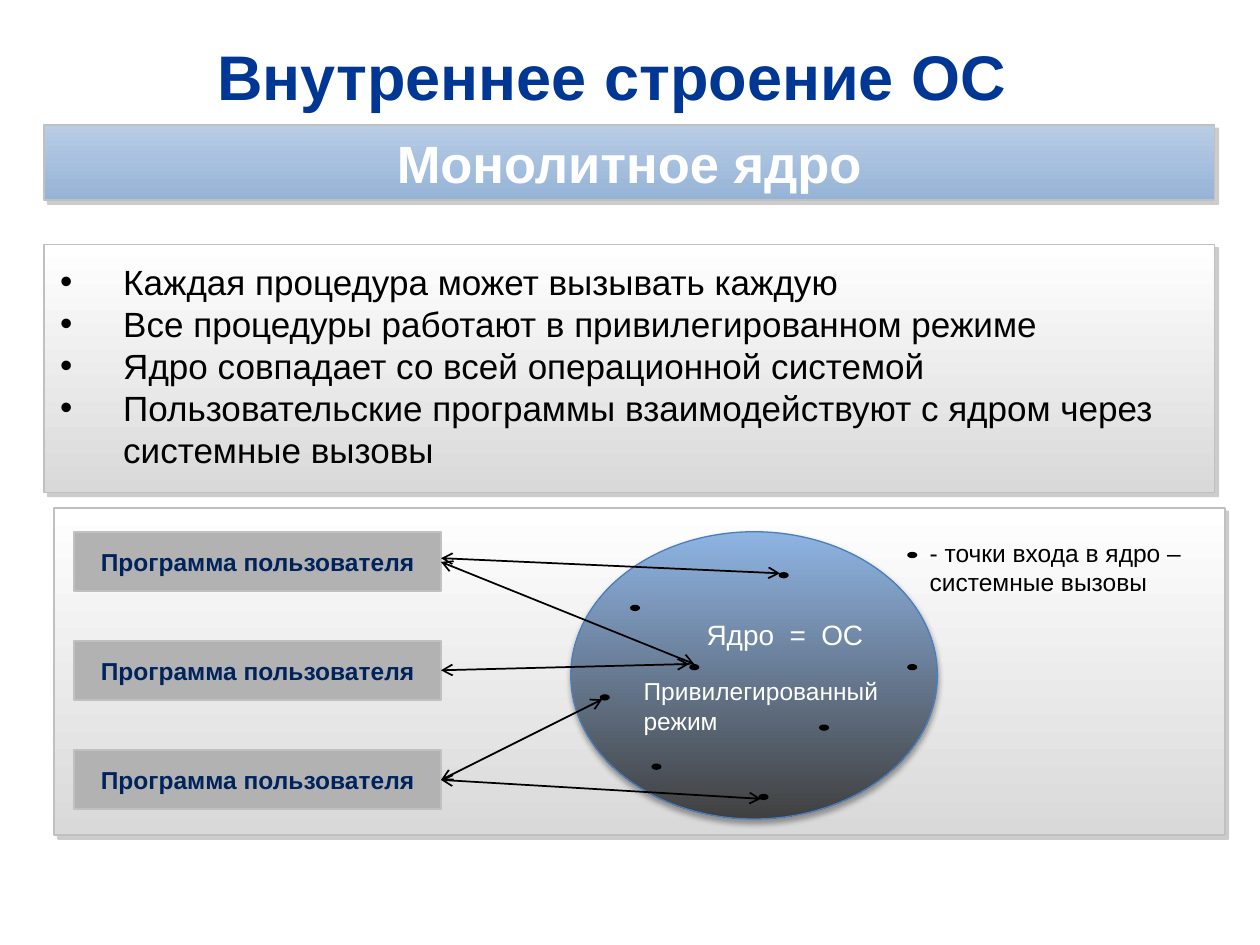
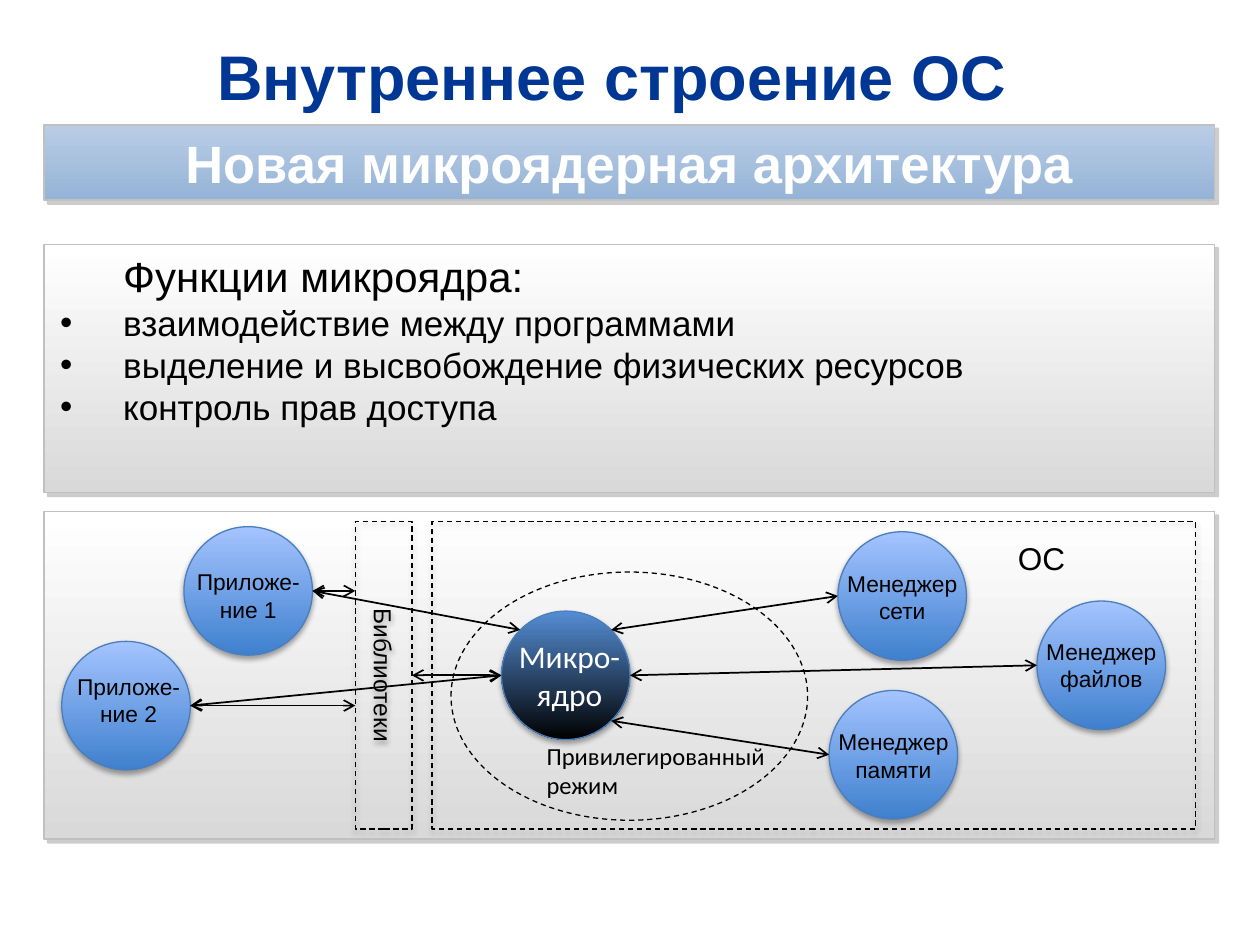
from dataclasses import dataclass
from math import cos, radians, sin

from lxml import etree
from pptx import Presentation
from pptx.dml.color import RGBColor
from pptx.enum.dml import MSO_LINE
from pptx.enum.shapes import MSO_CONNECTOR, MSO_SHAPE
from pptx.enum.text import MSO_ANCHOR, MSO_AUTO_SIZE, PP_ALIGN
from pptx.oxml.ns import qn
from pptx.util import Inches, Pt


@dataclass(frozen=True)
class Theme:
    font: str = "Arial"
    second_font: str = "Calibri"
    title: str = "003794"
    program_text: str = "00235C"
    program_fill: str = "B2B2B2"
    border: str = "C0C0C0"
    circle_border: str = "4B7EBC"
    black: str = "000000"
    white: str = "FFFFFF"
    panel: tuple = ("FFFFFF", "D9D9D9")
    band: tuple = ("B9CDE5", "95B3D7")
    kernel: tuple = ("8EB4E3", "404040")
    microkernel: tuple = ("558ED5", "000000")
    service: tuple = ("A4C4FF", "3F80CE")
    # colour, opacity in percent, blur and distance in points, direction in degrees
    hard_shadow: tuple = ("808080", 40, 0, 3, 45)
    soft_shadow: tuple = ("000000", 35, 3.1, 1.8, 90)
    title_size: int = 36
    band_size: int = 30
    heading_size: int = 24
    body_size: int = 20
    large_size: int = 18
    medium_size: int = 16
    small_size: int = 14
    label_size: int = 13


THEME = Theme()
LEFT, WIDTH = 0.35, 9.29
DIAMETER = 1.02
DOT_WIDTH, DOT_HEIGHT = 0.08, 0.05


def color(value):
    return RGBColor.from_string(value)


def format_paragraph(paragraph, size, text_color, bold=False, align=PP_ALIGN.LEFT, font=THEME.font):
    paragraph.alignment = align
    paragraph.font.name = font
    paragraph.font.size = Pt(size)
    paragraph.font.bold = bold
    paragraph.font.color.rgb = color(text_color)


def set_margins(frame, horizontal, vertical):
    frame.margin_left = frame.margin_right = Inches(horizontal)
    frame.margin_top = frame.margin_bottom = Inches(vertical)


def add_shadow(shape, shadow):
    shadow_color, opacity, blur, distance, direction = shadow
    effects = shape.element.spPr.find(qn("a:effectLst"))
    outer = etree.SubElement(effects, qn("a:outerShdw"), blurRad=str(Pt(blur)),
                             dist=str(Pt(distance)), dir=str(direction * 60000),
                             algn="ctr", rotWithShape="0")
    rgb = etree.SubElement(outer, qn("a:srgbClr"), val=shadow_color)
    etree.SubElement(rgb, qn("a:alpha"), val=str(opacity * 1000))


def add_figure(slide, kind, box, fill=None, border=None, border_width=1.0, dashed=False, shadow=None):
    """Draw a preset shape; a fill pair is a gradient from top to bottom."""
    shape = slide.shapes.add_shape(kind, *map(Inches, box))
    shape.shadow.inherit = False
    if fill is None:
        shape.fill.background()
    elif isinstance(fill, tuple):
        shape.fill.gradient()
        shape.fill.gradient_angle = 270
        for stop, stop_color in zip(shape.fill.gradient_stops, fill):
            stop.color.rgb = color(stop_color)
    else:
        shape.fill.solid()
        shape.fill.fore_color.rgb = color(fill)
    if border:
        shape.line.color.rgb = color(border)
        shape.line.width = Pt(border_width)
        if dashed:
            shape.line.dash_style = MSO_LINE.DASH
    else:
        shape.line.fill.background()
    if shadow:
        add_shadow(shape, shadow)
    return shape


def add_panel(slide, box, fill=THEME.panel):
    return add_figure(slide, MSO_SHAPE.RECTANGLE, box, fill, THEME.border, shadow=THEME.hard_shadow)


def add_ellipse(slide, box, fill):
    add_figure(slide, MSO_SHAPE.OVAL, box, fill, THEME.circle_border, 0.75, shadow=THEME.soft_shadow)


def add_dashed(slide, kind, box, shadow=None):
    return add_figure(slide, kind, box, None, THEME.black, 0.75, True, shadow)


def fill_shape_text(shape, text, size, text_color, bold=False):
    frame = shape.text_frame
    frame.word_wrap = True
    frame.vertical_anchor = MSO_ANCHOR.MIDDLE
    frame.text = text
    format_paragraph(frame.paragraphs[0], size, text_color, bold, PP_ALIGN.CENTER)


def add_label(slide, box, text, size, text_color=THEME.black, align=PP_ALIGN.LEFT, font=THEME.font):
    frame = slide.shapes.add_textbox(*map(Inches, box)).text_frame
    frame.word_wrap = True
    frame.auto_size = MSO_AUTO_SIZE.SHAPE_TO_FIT_TEXT
    frame.text = text
    for paragraph in frame.paragraphs:
        format_paragraph(paragraph, size, text_color, align=align, font=font)
    return frame


def indent_paragraph(paragraph, bulleted):
    properties = paragraph._p.get_or_add_pPr()
    properties.set("marL", str(Inches(0.5)))
    properties.set("indent", str(Inches(-0.5 if bulleted else 0)))
    if bulleted:
        etree.SubElement(properties, qn("a:buFont"), typeface=THEME.font)
        etree.SubElement(properties, qn("a:buChar"), char="•")


def add_bullets(slide, top, height, items, heading=None):
    lines = ([heading] if heading else []) + items
    frame = add_label(slide, (0.38, top, 9.27, height), "\n".join(lines), THEME.body_size)
    for paragraph in frame.paragraphs:
        # The bullet elements must come before the default run properties.
        properties = paragraph._p.get_or_add_pPr()
        defaults = properties.find(qn("a:defRPr"))
        is_heading = paragraph.text == heading
        indent_paragraph(paragraph, not is_heading)
        if defaults is not None:
            properties.append(defaults)
        if is_heading:
            paragraph.font.size = Pt(THEME.heading_size)


def add_double_arrow(slide, start, end):
    connector = slide.shapes.add_connector(MSO_CONNECTOR.STRAIGHT, *map(Inches, (*start, *end)))
    connector.line.color.rgb = color(THEME.black)
    connector.line.width = Pt(1)
    line = connector.line._get_or_add_ln()
    for tag in ("a:headEnd", "a:tailEnd"):
        etree.SubElement(line, qn(tag), type="arrow")
    etree.SubElement(connector.element.spPr, qn("a:effectLst"))


def rim_point(corner, degrees):
    """Point on a circle given by its top left corner; degrees run clockwise from the right."""
    radius = DIAMETER / 2
    angle = radians(degrees)
    return (corner[0] + radius + radius * cos(angle), corner[1] + radius + radius * sin(angle))


def add_topic_slide(presentation, topic):
    """Add a slide with the common title, topic band and text panel."""
    slide = presentation.slides.add_slide(presentation.slide_layouts[5])
    title = slide.shapes.title
    title.left, title.top, title.width, title.height = map(Inches, (LEFT, 0.26, WIDTH, 0.68))
    frame = title.text_frame
    fill_shape_text(title, "Внутреннее строение ОС", THEME.title_size, THEME.title, True)
    frame.auto_size = MSO_AUTO_SIZE.NONE
    frame.margin_right = Inches(0.38)
    band = add_panel(slide, (LEFT, 0.99, WIDTH, 0.6), THEME.band)
    set_margins(band.text_frame, 0.24, 0.04)
    fill_shape_text(band, topic, THEME.band_size, THEME.white, True)
    add_panel(slide, (LEFT, 1.94, WIDTH, 1.97))
    return slide


def build_monolithic_slide(presentation):
    slide = add_topic_slide(presentation, "Монолитное ядро")
    add_bullets(slide, 2.02, 1.78, [
        "Каждая процедура может вызывать каждую",
        "Все процедуры работают в привилегированном режиме",
        "Ядро совпадает со всей операционной системой",
        "Пользовательские программы взаимодействуют с ядром через системные вызовы",
    ])
    add_panel(slide, (0.43, 4.03, WIDTH, 2.6))
    for row in range(3):
        program = add_figure(slide, MSO_SHAPE.RECTANGLE, (0.59, 4.22 + row * 0.865, 2.91, 0.47),
                             THEME.program_fill, THEME.border)
        set_margins(program.text_frame, 0, 0)
        fill_shape_text(program, "Программа пользователя", THEME.small_size, THEME.program_text, True)

    add_ellipse(slide, (4.53, 4.22, 2.91, 2.28), THEME.kernel)
    add_label(slide, (6.42, 4.85, 0.63, 0.37), "ОС", THEME.medium_size, THEME.white)
    add_label(slide, (5.01, 5.32, 2.27, 0.57), "Привилегированный режим", THEME.small_size, THEME.white)
    add_label(slide, (5.51, 4.85, 1.07, 0.37), "Ядро  =", THEME.medium_size, THEME.white)

    entry_points = [(5, 4.8), (6.18, 4.54), (5.17, 6.06), (5.47, 5.27), (4.76, 5.51),
                    (6.02, 6.3), (7.2, 5.27), (6.5, 5.75)]
    legend_dot = (7.2, 4.38)
    for dot in entry_points + [legend_dot]:
        add_figure(slide, MSO_SHAPE.OVAL, (*dot, DOT_WIDTH, DOT_HEIGHT), THEME.black)
    add_label(slide, (7.28, 4.22, 2.2, 0.57), "- точки входа в ядро –\vсистемные вызовы", THEME.small_size)

    program_edge = 3.5
    for height, entry in [(4.43, (6.19, 4.55)), (4.46, (5.51, 5.27)), (5.32, (5.47, 5.27)),
                          (6.19, (4.78, 5.55)), (6.19, (6.04, 6.34))]:
        add_double_arrow(slide, (program_edge, height), entry)


def build_microkernel_slide(presentation):
    slide = add_topic_slide(presentation, "Новая микроядерная архитектура")
    add_bullets(slide, 1.94, 1.51, [
        "взаимодействие между программами",
        "выделение и высвобождение физических ресурсов",
        "контроль прав доступа",
    ], heading="Функции микроядра:")
    add_panel(slide, (LEFT, 4.06, WIDTH, 2.6))

    microkernel = (3.98, 4.85)
    network, files, memory = (6.65, 4.22), (8.23, 4.77), (6.58, 5.48)
    first_app, second_app = (1.46, 4.18), (0.49, 5.09)
    add_ellipse(slide, (*microkernel, DIAMETER, DIAMETER), THEME.microkernel)
    for corner in (network, files, memory, first_app, second_app):
        add_ellipse(slide, (*corner, DIAMETER, DIAMETER), THEME.service)

    add_dashed(slide, MSO_SHAPE.OVAL, (3.58, 4.54, 2.83, 1.97))
    add_dashed(slide, MSO_SHAPE.RECTANGLE, (3.43, 4.14, 6.06, 2.44), THEME.soft_shadow)
    library_left, library_width = 2.82, 0.45
    libraries = add_dashed(slide, MSO_SHAPE.RECTANGLE, (library_left, 4.14, library_width, 2.44),
                           THEME.soft_shadow)
    fill_shape_text(libraries, "Библиотеки", THEME.small_size, THEME.black)
    libraries.element.txBody.bodyPr.set("vert", "vert")

    for degrees, corner, side in [(-45, network, 180), (0, files, 180), (45, memory, 180),
                                  (-135, first_app, 0), (180, second_app, 0)]:
        add_double_arrow(slide, rim_point(microkernel, degrees), rim_point(corner, side))
    for app in (first_app, second_app):
        start = rim_point(app, 0)
        add_double_arrow(slide, start, (library_left, start[1]))
    kernel_side = rim_point(microkernel, 180)
    add_double_arrow(slide, (library_left + library_width, kernel_side[1]), kernel_side)

    for left, top, text in [(6.57, 4.47, "Менеджер сети"), (8.15, 5.01, "Менеджер файлов"),
                            (6.5, 5.73, "Менеджер памяти"), (1.38, 4.46, "Приложе-ние 1"),
                            (0.43, 5.29, "Приложе-ние 2")]:
        add_label(slide, (left, top, 1.18, 0.54), text, THEME.label_size, align=PP_ALIGN.CENTER)
    add_label(slide, (3.98, 5.01, 1.08, 0.71), "Микро-\nядро", THEME.large_size, THEME.white,
              PP_ALIGN.CENTER, THEME.second_font)
    add_label(slide, (4.24, 5.83, 2.2, 0.57), "Привилегированный режим", THEME.small_size,
              font=THEME.second_font)
    add_label(slide, (7.98, 4.23, 0.79, 0.4), "ОС", THEME.large_size)


def main():
    presentation = Presentation()
    presentation.slide_width, presentation.slide_height = Inches(10), Inches(7.5)
    build_monolithic_slide(presentation)
    build_microkernel_slide(presentation)
    presentation.save("out.pptx")


if __name__ == "__main__":
    main()
